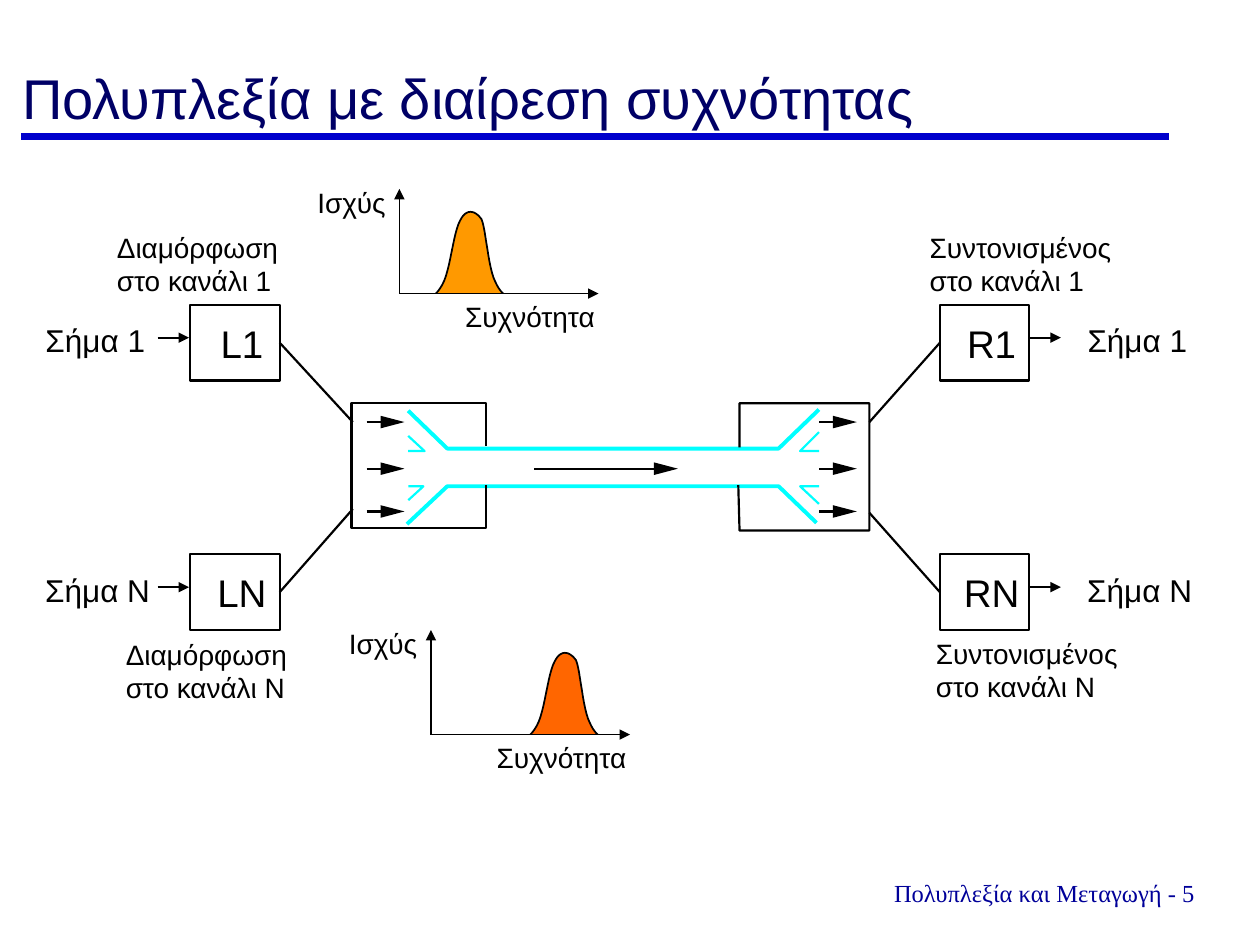
from dataclasses import dataclass

from lxml import etree
from pptx import Presentation
from pptx.dml.color import RGBColor
from pptx.enum.shapes import MSO_CONNECTOR, MSO_SHAPE
from pptx.enum.text import MSO_ANCHOR, PP_ALIGN
from pptx.oxml.ns import qn
from pptx.util import Inches, Pt

BLACK = RGBColor(0, 0, 0)
WHITE = RGBColor(255, 255, 255)
CYAN = RGBColor(0, 255, 255)
NAVY = RGBColor(0, 0, 0x66)
BLUE = RGBColor(0, 0, 0xCC)
INK = RGBColor(0, 0, 0x99)
AMBER = RGBColor(0xFF, 0x99, 0)
ORANGE = RGBColor(0xFF, 0x66, 0)
LINE = MSO_CONNECTOR.STRAIGHT
RECT = MSO_SHAPE.RECTANGLE
LEFT, CENTER, RIGHT = PP_ALIGN.LEFT, PP_ALIGN.CENTER, PP_ALIGN.RIGHT
TOP, MIDDLE, BOTTOM = MSO_ANCHOR.TOP, MSO_ANCHOR.MIDDLE, MSO_ANCHOR.BOTTOM

Point = tuple[float, float]

BELL = [(0, .75), (.09, .72), (.18, .69), (.25, .58), (.32, .47), (.36, .17),
        (.42, .08), (.47, -.01), (.54, 0), (.59, .08), (.62, .16), (.62, .47),
        (.67, .58), (.71, .69), (.77, .72), (.83, .74)]
STEPS = 12


@dataclass
class Station:
    name: str
    left: float
    top: float
    side: int
    port: Point
    arrow: float
    signal: str
    label: float
    note: str
    area: tuple[float, float, float]


@dataclass
class Graph:
    axis: float
    base: float
    bell: float
    color: RGBColor


STATIONS = [
    Station("L1", 1.51, 2.42, 3, (2.8, 3.35), 1.25, "Σήμα 1", .26,
            "Διαμόρφωση στο κανάλι 1", (.83, 1.78, 1.73)),
    Station("LN", 1.51, 4.4, 3, (2.8, 4.04), 1.25, "Σήμα N", .26,
            "Διαμόρφωση στο κανάλι N", (.9, 5.01, 1.8)),
    Station("R1", 7.46, 2.42, 1, (6.9, 3.35), 8.17, "Σήμα 1", 8.53,
            "Συντονισμένος στο κανάλι 1", (7.28, 1.78, 1.97)),
    Station("RN", 7.46, 4.4, 1, (6.9, 4.07), 8.17, "Σήμα N", 8.53,
            "Συντονισμένος στο κανάλι N", (7.33, 5, 1.92)),
]
GRAPHS = [Graph(3.17, 2.33, 3.25, AMBER), Graph(3.42, 5.83, 4, ORANGE)]

PIPES = [
    [(3.24, 3.26), (3.55, 3.56), (6.18, 3.56), (6.5, 3.25)],
    [(3.23, 4.16), (3.55, 3.86), (6.18, 3.86), (6.48, 4.15)],
]
FRAMES = [
    [(3.86, 3.54), (3.86, 3.2), (2.79, 3.2), (2.79, 4.19), (3.86, 4.19), (3.86, 3.85)],
    [(5.86, 3.85), (5.87, 4.21), (6.9, 4.21), (6.9, 3.2), (5.87, 3.2), (5.87, 3.55)],
]
HOOKS = [
    [(3.24, 3.58), (3.37, 3.58), (3.24, 3.46)],
    [(3.24, 3.86), (3.36, 3.86), (3.24, 3.97)],
    [(6.5, 3.58), (6.35, 3.58), (6.5, 3.43)],
    [(6.5, 3.86), (6.35, 3.86), (6.5, 4)],
]

deck = Presentation()
deck.slide_width, deck.slide_height = Inches(10), Inches(7.5)
slide = deck.slides.add_slide(deck.slide_layouts[6])
shapes = slide.shapes


def write(frame, text: str, size: float, color: RGBColor, align=LEFT, font="Arial"):
    para = frame.paragraphs[0]
    para.alignment = align
    run = para.add_run()
    run.text = text
    run.font.size, run.font.name = Pt(size), font
    run.font.color.rgb = color


def label(text: str, x: float, y: float, w: float, h: float, size: float,
          color=BLACK, align=LEFT, font="Arial", wrap=True, anchor=TOP):
    frame = shapes.add_textbox(Inches(x), Inches(y), Inches(w), Inches(h)).text_frame
    frame.word_wrap = wrap
    frame.vertical_anchor = anchor
    write(frame, text, size, color, align, font)


def line(start: Point, end: Point, width=1.25, color=BLACK, tip=False):
    link = shapes.add_connector(LINE, *map(Inches, start + end))
    link.line.color.rgb, link.line.width = color, Pt(width)
    if tip:
        etree.SubElement(link.line._get_or_add_ln(), qn("a:tailEnd"), type="triangle")
    etree.SubElement(link._element.spPr, qn("a:effectLst"))
    return link


def trace(points: list[Point], width=1.25, color=BLACK, fill=None, close=False):
    pen = shapes.build_freeform(*map(Inches, points[0]))
    pen.add_line_segments([(Inches(x), Inches(y)) for x, y in points[1:]], close)
    form = pen.convert_to_shape()
    form.shadow.inherit = False
    if fill is None:
        form.fill.background()
    else:
        form.fill.solid()
        form.fill.fore_color.rgb = fill
    if width:
        form.line.color.rgb, form.line.width = color, Pt(width)
    else:
        form.line.fill.background()
    return form


def box(x: float, y: float, w: float, h: float):
    rect = shapes.add_shape(RECT, *map(Inches, (x, y, w, h)))
    rect.shadow.inherit = False
    return rect


def curve(x: float, y: float) -> list[Point]:
    points = [(x + BELL[0][0], y + BELL[0][1])]
    for i in range(0, len(BELL) - 1, 3):
        a, b, c, d = BELL[i:i + 4]
        for n in range(1, STEPS + 1):
            t = n / STEPS
            u = 1 - t
            mix = [u**3 * p + 3 * u * u * t * q + 3 * u * t * t * r + t**3 * s
                   for p, q, r, s in zip(a, b, c, d)]
            points.append((x + mix[0], y + mix[1]))
    return points


def plot(graph: Graph):
    x, y = graph.axis, graph.base
    bell = trace(curve(graph.bell, y - .66), 1, fill=graph.color)
    bell.rotation = 356.7
    cover = box(graph.bell - .08, y, 1.08, .17)
    cover.fill.solid()
    cover.fill.fore_color.rgb = WHITE
    cover.line.fill.background()
    line((x, y), (x, y - .83), 1, tip=True)
    line((x, y), (x + 1.58, y), 1, tip=True)
    label("Συχνότητα", x + .41, y, 1.24, .37, 16, align=RIGHT, wrap=False)
    label("Ισχύς", x - .76, y - .91, .75, .37, 16, align=RIGHT, wrap=False)


def place(item: Station):
    rect = box(item.left, item.top, .71, .6)
    rect.fill.background()
    rect.line.color.rgb, rect.line.width = BLACK, Pt(1.25)
    frame = rect.text_frame
    frame.margin_left = Inches(.11)
    frame.margin_right = frame.margin_top = frame.margin_bottom = 0
    frame.word_wrap, frame.vertical_anchor = False, MIDDLE
    write(frame, item.name, 22, BLACK, CENTER)
    line((item.left, item.top), item.port).begin_connect(rect, item.side)
    y = item.top + .26
    line((item.arrow, y), (item.arrow + .25, y), 1, tip=True)
    wide = .99 if item.signal.endswith("1") else 1.03
    label(item.signal, item.label, item.top + .08, wide, .4, 18, align=RIGHT, wrap=False)
    label(item.note, *item.area, .64, 16)


def flow(x: float, y: float, tip: float):
    line((x, y), (tip - .15, y))
    trace([(tip - .19, y - .05), (tip, y), (tip - .19, y + .05)], 0, fill=BLACK, close=True)


line((.17, 1.08), (9.28, 1.08), 4, BLUE)
label("Πολυπλεξία και Μεταγωγή - 5", 6.83, 6.92, 2.92, .33, 14, INK, CENTER,
      "Times New Roman")
label("Πολυπλεξία με διαίρεση συχνότητας", .08, .25, 9.67, .84, 32, NAVY, anchor=BOTTOM)
for graph in GRAPHS:
    plot(graph)
for pipe in PIPES:
    trace(pipe, 2.25, CYAN)
for frame in FRAMES:
    trace(frame)
for hook in HOOKS:
    trace(hook, color=CYAN)
for item in STATIONS:
    place(item)
flow(4.24, 3.72, 5.38)
for y in (3.35, 3.72, 4.06):
    flow(2.91, y, 3.21)
    flow(6.5, y, 6.8)

deck.save("out.pptx")
